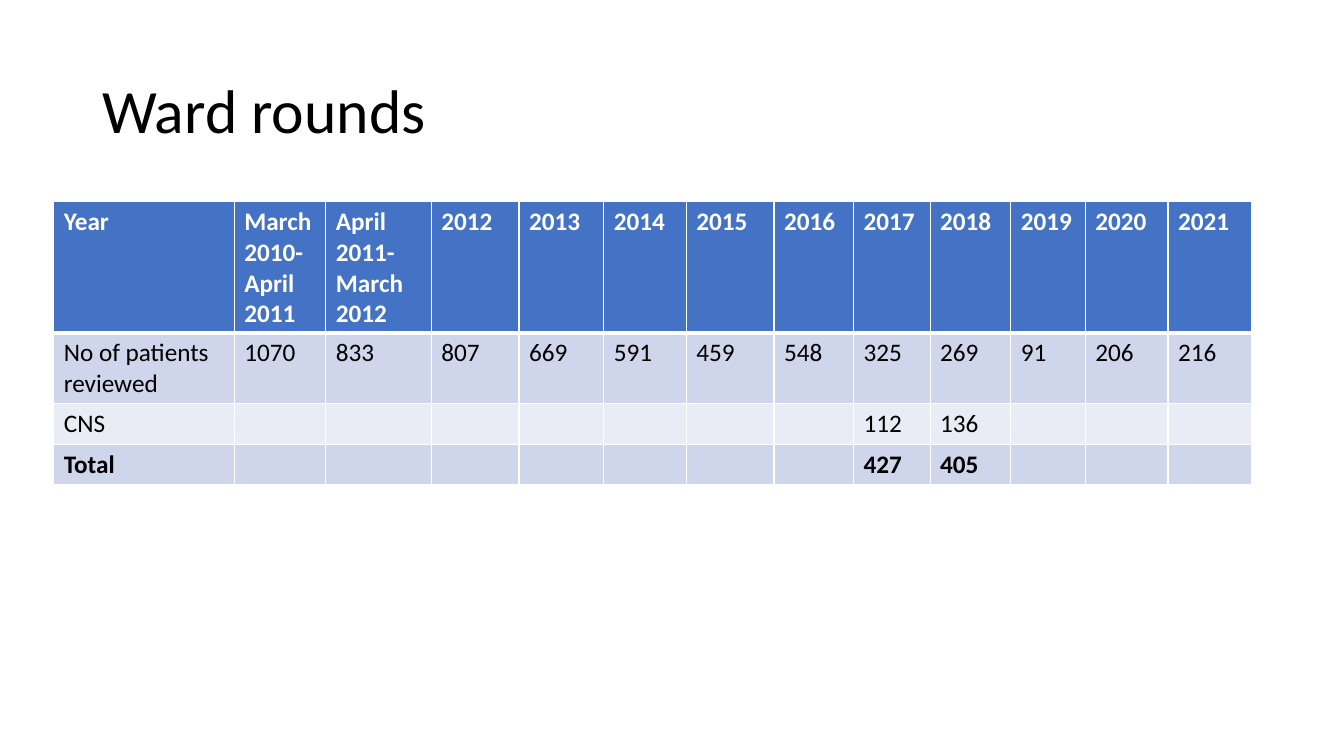
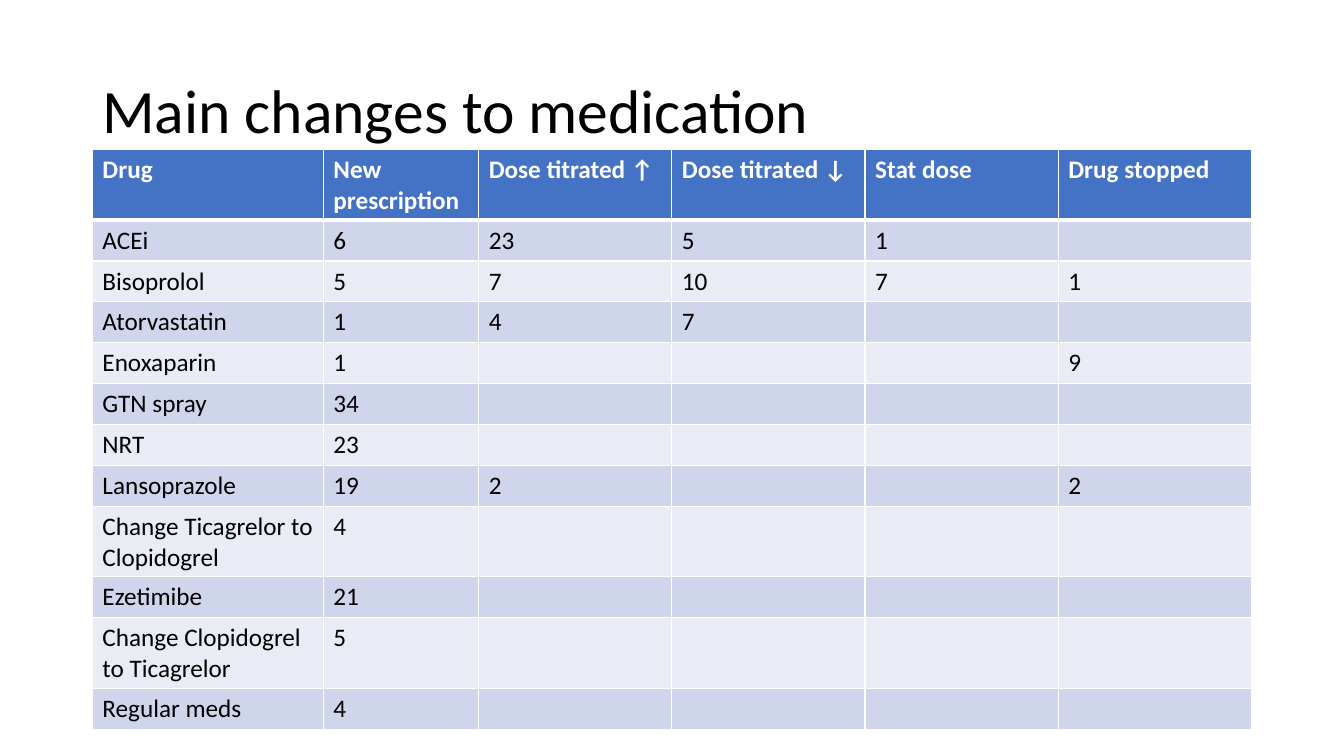
from lxml.etree import SubElement
from pptx import Presentation
from pptx.dml.color import RGBColor
from pptx.enum.text import MSO_ANCHOR
from pptx.oxml.ns import qn
from pptx.util import Pt

# Shared style
BLACK = RGBColor(0x00, 0x00, 0x00)
WHITE = RGBColor(0xFF, 0xFF, 0xFF)
BLUE = RGBColor(0x44, 0x72, 0xC4)
BANDS = (RGBColor(0xCF, 0xD5, 0xEA), RGBColor(0xE9, 0xEB, 0xF5))
FONT = "Calibri"
ROW = 29.2


class Deck:
    def __init__(self):
        self.prs = Presentation()
        self.prs.slide_width, self.prs.slide_height = Pt(960), Pt(540)
        self.slide = None

    def page(self, title):
        self.slide = self.prs.slides.add_slide(self.prs.slide_layouts[6])
        self.title(title)

    def run(self, para, text, size, color, bold=False):
        run = para.add_run()
        run.text = text
        font = run.font
        font.name, font.size, font.bold = FONT, Pt(size), bold
        font.color.rgb = color

    def title(self, text):
        box = self.slide.shapes.add_textbox(Pt(66), Pt(28.75), Pt(828), Pt(104.4))
        frame = box.text_frame
        frame.word_wrap = True
        frame.vertical_anchor = MSO_ANCHOR.MIDDLE
        para = frame.paragraphs[0]
        para.line_spacing = 0.9
        self.run(para, text, 44, BLACK)

    def edge(self, cell, side, width):
        line = SubElement(cell._tc.get_or_add_tcPr(), qn(f"a:ln{side}"), w=str(Pt(width)))
        fill = SubElement(line, qn("a:solidFill"))
        SubElement(fill, qn("a:srgbClr"), val=str(WHITE))

    def cell(self, cell, text, row, bold):
        # The rule below the header is thicker than the others
        widths = {"L": 1, "R": 1, "T": 3 if row == 1 else 1, "B": 3 if row == 0 else 1}
        for side, width in widths.items():
            self.edge(cell, side, width)
        cell.fill.solid()
        cell.fill.fore_color.rgb = BANDS[(row - 1) % 2] if row else BLUE
        if text:
            color = BLACK if row else WHITE
            self.run(cell.text_frame.paragraphs[0], text, 18, color, bold)

    def table(self, left, top, widths, rows, strong=(0,)):
        frame = self.slide.shapes.add_table(
            len(rows), len(widths), Pt(left), Pt(top), Pt(sum(widths)), Pt(ROW * len(rows)))
        table = frame.table
        table.horz_banding = False
        for col, width in zip(table.columns, widths):
            col.width = Pt(width)
        for r, texts in enumerate(rows):
            table.rows[r].height = Pt(ROW)
            for c in range(len(widths)):
                text = texts[c] if c < len(texts) else ""
                self.cell(table.cell(r, c), text, r, r in strong)


def main():
    deck = Deck()

    # Ward rounds by year
    deck.page("Ward rounds")
    gap = [""] * 7
    years = [str(year) for year in range(2012, 2022)]
    deck.table(
        38.4, 144,
        [128.9, 65.5, 75.4, 62.6, 60.5, 59, 62.6, 56.9, 54.7, 57.6, 53.3, 59, 59.8],
        [
            ["Year", "March 2010-April 2011", "April 2011-March 2012", *years],
            ["No of patients reviewed", "1070", "833", "807", "669", "591", "459",
             "548", "325", "269", "91", "206", "216"],
            ["CNS", *gap, "112", "136"],
            ["Total", *gap, "427", "405"],
        ],
        strong=(0, 3))

    # Medication changes by drug
    deck.page("Main changes to medication")
    deck.table(
        66, 106.8, [165, 111] + [138] * 4,
        [
            ["Drug", "New prescription", "Dose titrated ↑", "Dose titrated ↓",
             "Stat dose", "Drug stopped"],
            ["ACEi", "6", "23", "5", "1"],
            ["Bisoprolol", "5", "7", "10", "7", "1"],
            ["Atorvastatin", "1", "4", "7"],
            ["Enoxaparin", "1", "", "", "", "9"],
            ["GTN spray", "34"],
            ["NRT", "23"],
            ["Lansoprazole", "19", "2", "", "", "2"],
            ["Change Ticagrelor to Clopidogrel", "4"],
            ["Ezetimibe", "21"],
            ["Change Clopidogrel to Ticagrelor", "5"],
            ["Regular meds", "4"],
        ])

    deck.prs.save("out.pptx")


if __name__ == "__main__":
    main()
